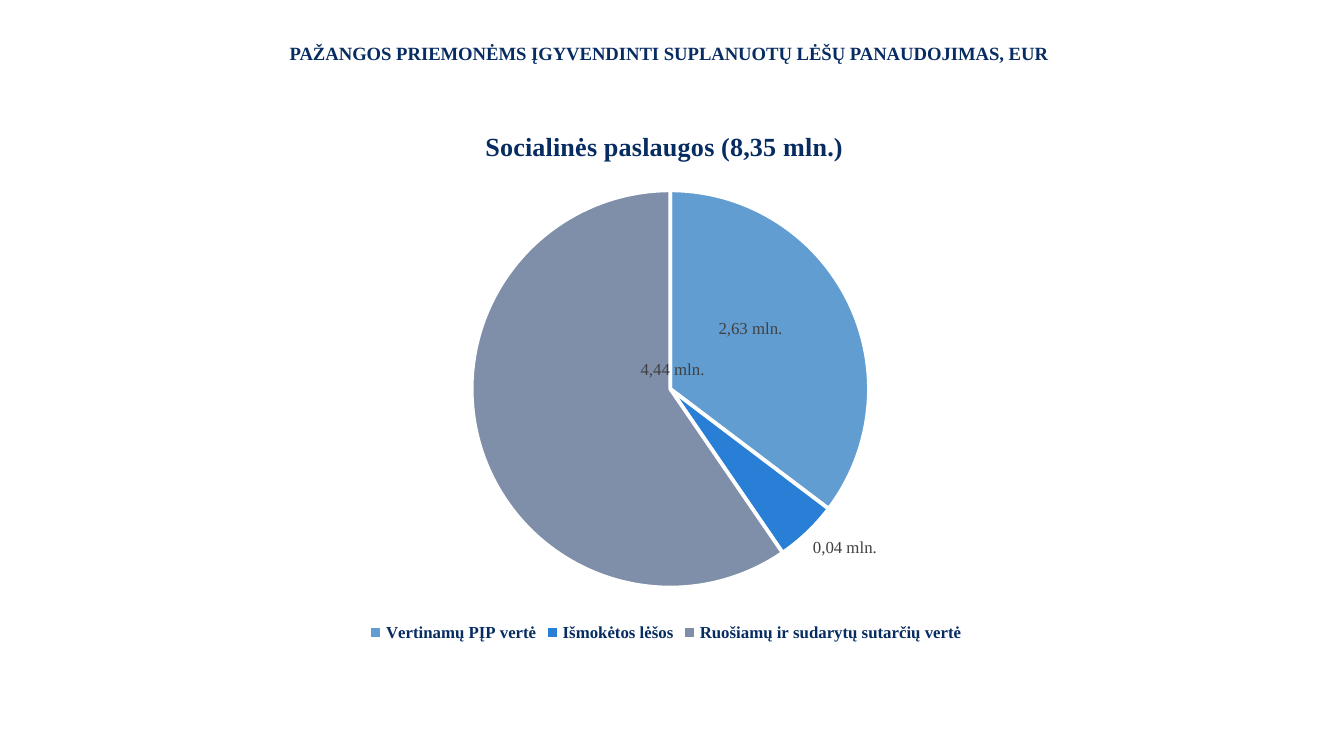
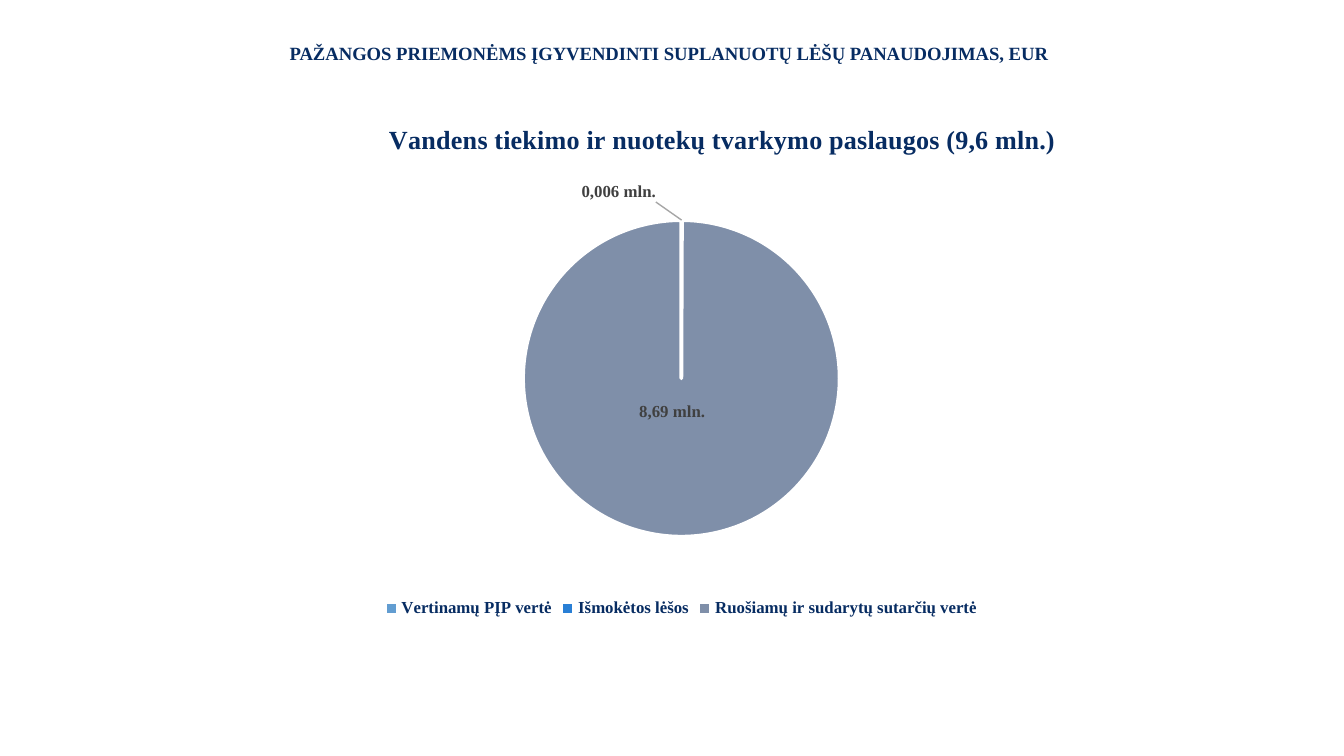
"""Builds two slides on planned funds, each with a pie chart."""
from lxml import etree
from pptx import Presentation
from pptx.chart.data import CategoryChartData
from pptx.dml.color import RGBColor
from pptx.enum.chart import XL_CHART_TYPE, XL_LABEL_POSITION, XL_LEGEND_POSITION
from pptx.enum.text import MSO_ANCHOR, MSO_AUTO_SIZE, PP_ALIGN
from pptx.oxml.ns import qn
from pptx.util import Inches, Pt

PIE = XL_CHART_TYPE.PIE
BOTTOM = XL_LEGEND_POSITION.BOTTOM
INSIDE = XL_LABEL_POSITION.CENTER
OUTSIDE = XL_LABEL_POSITION.OUTSIDE_END
TOP = MSO_ANCHOR.TOP
CENTER = PP_ALIGN.CENTER
GROW = MSO_AUTO_SIZE.SHAPE_TO_FIT_TEXT

NAVY = RGBColor(0x07, 0x2C, 0x62)
GRAY = RGBColor(0x40, 0x40, 0x40)
SILVER = RGBColor(0xA6, 0xA6, 0xA6)
BLACK = RGBColor(0, 0, 0)
WHITE = RGBColor(0xFF, 0xFF, 0xFF)
FILLS = [RGBColor(0x62, 0x9D, 0xD1), RGBColor(0x29, 0x7F, 0xD5),
         RGBColor(0x7F, 0x8F, 0xA9)]
SERIF = "Times New Roman"
SANS = "League Spartan"
HEAD = "PAŽANGOS PRIEMONĖMS ĮGYVENDINTI SUPLANUOTŲ LĖŠŲ PANAUDOJIMAS, EUR"
PARTS = ["Vertinamų PĮP vertė", "Išmokėtos lėšos",
         "Ruošiamų ir sudarytų sutarčių vertė"]
EURO = '"€" #,##0'

SLIDES = [
    dict(title="Socialinės paslaugos (8,35 mln.)", box=(1.67, 0.81, 6.57, 4.01),
         values=(2635000, 381616, 4444856), bold=False,
         spot=(0.29, 0.03), plot=(0.28, 0.15, 0.45, 0.74),
         labels=[("2,63 mln.", INSIDE, (-0.01, -0.03)),
                 ("0,04 mln.", OUTSIDE, None),
                 ("4,44 mln.", INSIDE, (0.11, -0.09))]),
    dict(title="Vandens tiekimo ir nuotekų tvarkymo paslaugos (9,6 mln.)",
         box=(1.72, 0.84, 6.7, 3.8),
         values=(0, 5604, 8690956), bold=True,
         spot=(0.17, 0.01), plot=(0.32, 0.21, 0.36, 0.62),
         labels=[None,
                 ("0,006 mln.", OUTSIDE, (-0.07, -0.02)),
                 ("8,69 mln.", INSIDE, (-0.01, -0.09))]),
]


def style(font, size=9, color=NAVY, bold=True, name=SERIF):
    """Format a font."""
    font.size, font.bold, font.name = Pt(size), bold, name
    font.color.rgb = color


def write(frame, text, align=None, **look):
    """Put one formatted run in a text frame."""
    para = frame.paragraphs[0]
    if align is not None:
        para.alignment = align
    run = para.add_run()
    run.text = text
    style(run.font, **look)


def node(parent, tag, value=None):
    """Add an XML child, in the chart namespace unless another is named."""
    name = tag if ":" in tag else "c:" + tag
    child = etree.SubElement(parent, qn(name))
    if value is not None:
        child.set("val", str(value))
    return child


def place(parent, index, sizes, edge=True, inner=False):
    """Give a chart part a manual layout in shares of the chart."""
    for old in parent.findall(qn("c:layout")):
        parent.remove(old)
    layout = parent.makeelement(qn("c:layout"), {})
    parent.insert(index, layout)
    manual = node(layout, "manualLayout")
    if inner:
        node(manual, "layoutTarget", "inner")
    if edge:
        node(manual, "xMode", "edge")
        node(manual, "yMode", "edge")
    for tag, size in zip("xywh", sizes):
        node(manual, tag, size)


def add_head(slide):
    """Move and fill the slide title."""
    head = slide.shapes.title
    head.left, head.top, head.width, head.height = map(
        Inches, (0.46, 0.26, 9.03, 0.27))
    frame = head.text_frame
    frame.word_wrap, frame.auto_size = True, GROW
    frame.vertical_anchor = TOP
    write(frame, HEAD, align=CENTER, size=10)


def add_label(series, index, label, bold):
    """Label one slice, or hide its label."""
    if label is None:
        notes = series.data_labels._element
        item = notes.makeelement(qn("c:dLbl"), {})
        node(item, "idx", index)
        node(item, "delete", 1)
        notes.insert(0, item)
        return
    text, side, shift = label
    point = series.points[index].data_label
    write(point.text_frame, text, color=GRAY, bold=bold)
    point.position = side
    if shift:
        item = series._element.xpath(f".//c:dLbl[c:idx/@val='{index}']")[0]
        place(item, 1, shift, edge=False)


def add_leads(notes):
    """Draw thin lines from moved labels to their slices."""
    root = notes._element
    for old in root.findall(qn("c:showLeaderLines")):
        root.remove(old)
    node(root, "showLeaderLines", 1)
    line = node(node(node(root, "leaderLines"), "spPr"), "a:ln")
    line.set("w", str(Pt(0.75)))
    node(node(line, "a:solidFill"), "a:srgbClr", SILVER)


def add_pie(slide, title, box, values, bold, spot, plot, labels):
    """Draw one pie chart with its title, legend and labels."""
    data = CategoryChartData(number_format=EURO)
    data.categories = PARTS
    data.add_series("Series 1", values)
    chart = slide.shapes.add_chart(PIE, *map(Inches, box), data).chart
    style(chart.font, size=10, color=BLACK, bold=False, name=SANS)

    chart.has_title = True
    write(chart.chart_title.text_frame, title, size=14)
    chart.chart_title.include_in_layout = False
    place(chart.chart_title._element, 1, spot)
    place(chart._chartSpace.chart.plotArea, 0, plot, inner=True)

    chart.has_legend = True
    chart.legend.position = BOTTOM
    chart.legend.include_in_layout = False
    style(chart.legend.font)

    chart.plots[0].vary_by_categories = True
    series = chart.plots[0].series[0]
    notes = series.data_labels
    notes.show_value = True
    notes.number_format, notes.number_format_is_linked = EURO, False
    style(notes.font, color=GRAY, bold=not bold)
    add_leads(notes)
    for index, (fill, label) in enumerate(zip(FILLS, labels)):
        form = series.points[index].format
        form.fill.solid()
        form.fill.fore_color.rgb = fill
        form.line.color.rgb = WHITE
        form.line.width = Pt(2)
        add_label(series, index, label, bold)


def main():
    """Build and save the deck."""
    deck = Presentation()
    deck.slide_width, deck.slide_height = Inches(10), Inches(10 * 9 / 16)
    for parts in SLIDES:
        slide = deck.slides.add_slide(deck.slide_layouts[5])
        add_head(slide)
        add_pie(slide, **parts)
    deck.save("out.pptx")


if __name__ == "__main__":
    main()
